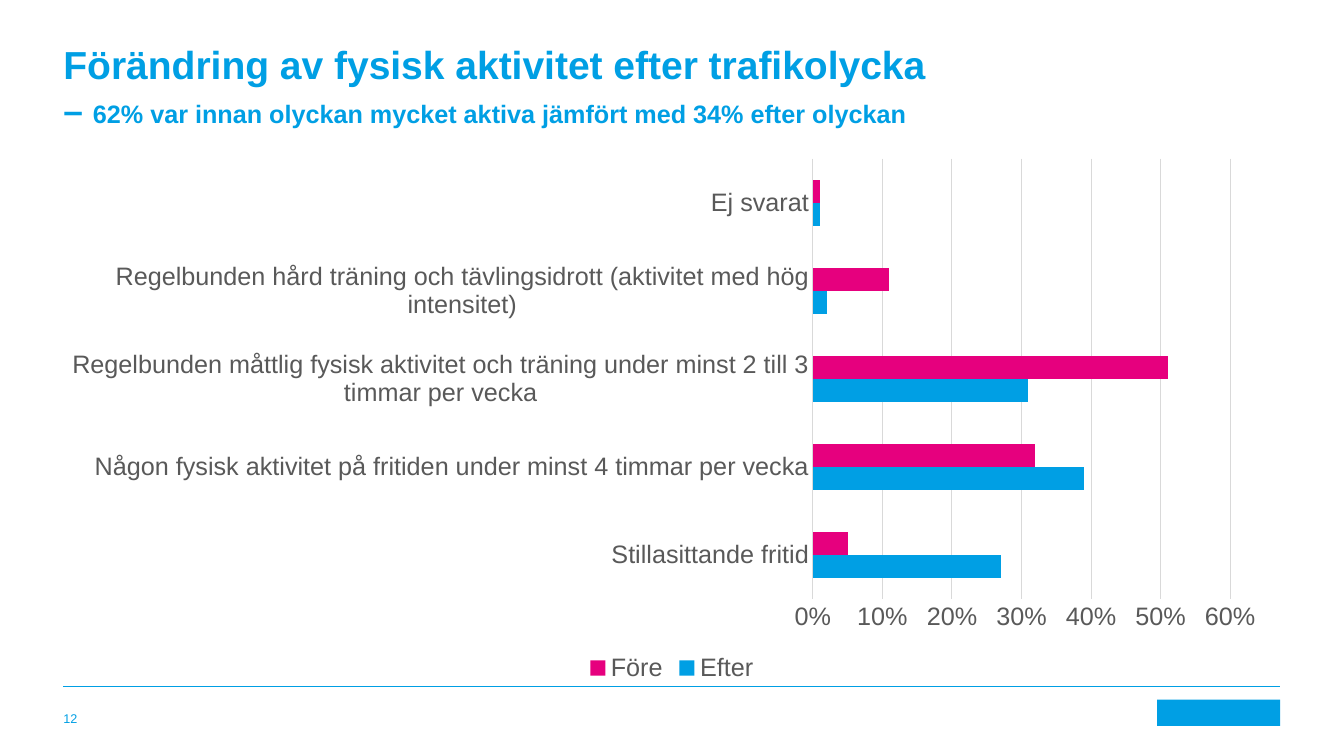
from lxml import etree
from pptx import Presentation
from pptx.chart.data import CategoryChartData
from pptx.dml.color import RGBColor
from pptx.enum.chart import XL_CHART_TYPE as ChartType
from pptx.enum.chart import XL_LEGEND_POSITION as LegendPosition
from pptx.enum.chart import XL_TICK_MARK as TickMark
from pptx.enum.shapes import MSO_CONNECTOR as Connector
from pptx.enum.shapes import MSO_SHAPE as Shape
from pptx.enum.text import MSO_ANCHOR as Anchor
from pptx.oxml.ns import qn
from pptx.util import Cm, Pt

BLUE, PINK, GREY, GRID = "009FE4", "E6007E", "595959", "D9D9D9"
FONT = "Arial"
MARGIN, CONTENT_WIDTH = 1.6, 30.66

ACTIVITY_LEVELS = [
    "Stillasittande fritid",
    "Någon fysisk aktivitet på fritiden under minst 4 timmar per vecka",
    "Regelbunden måttlig fysisk aktivitet och träning under minst 2 till 3 timmar per vecka",
    "Regelbunden hård träning och tävlingsidrott (aktivitet med hög intensitet)",
    "Ej svarat",
]
SHARES = [
    ("Efter", (0.27, 0.39, 0.31, 0.02, 0.01), BLUE),
    ("Före", (0.05, 0.32, 0.51, 0.11, 0.01), PINK),
]
# Share of the chart box taken by the bars
PLOT_LAYOUT = {"x": 0.616, "y": 0.02, "w": 0.343, "h": 0.816}


def color(hex_value):
    return RGBColor.from_string(hex_value)


def style_font(font, size, hex_value, bold=False):
    font.name = FONT
    font.size = Pt(size)
    font.bold = bold
    font.color.rgb = color(hex_value)


def add_text_frame(slide, left, top, width, height, anchor):
    frame = slide.shapes.add_textbox(Cm(left), Cm(top), Cm(width), Cm(height)).text_frame
    frame.word_wrap = True
    frame.vertical_anchor = anchor
    frame.margin_left = frame.margin_top = frame.margin_right = frame.margin_bottom = 0
    return frame


def add_run(paragraph, text, size, bold=False):
    run = paragraph.add_run()
    run.text = text
    style_font(run.font, size, BLUE, bold)


def add_heading(slide, left, top, width, height):
    heading = add_text_frame(slide, left, top, width, height, Anchor.TOP)
    title = heading.paragraphs[0]
    add_run(title, "Förändring av fysisk aktivitet efter trafikolycka", 27.9, True)
    subtitle = heading.add_paragraph()
    subtitle.space_before = Pt(1)
    add_run(subtitle, "– ", 25.2, True)
    add_run(subtitle, "62% var innan olyckan mycket aktiva jämfört med 34% efter olyckan", 18, True)


def fix_plot_area(chart):
    plot_area = chart._chartSpace.chart.plotArea
    layout = plot_area.find(qn("c:layout"))
    if layout is None:
        layout = etree.Element(qn("c:layout"))
        plot_area.insert(0, layout)
    manual = etree.SubElement(layout, qn("c:manualLayout"))
    settings = {"layoutTarget": "inner", "xMode": "edge", "yMode": "edge", **PLOT_LAYOUT}
    for tag, value in settings.items():
        etree.SubElement(manual, qn(f"c:{tag}")).set("val", str(value))


def add_activity_chart(slide, left, top, width, height):
    data = CategoryChartData(number_format="0%")
    data.categories = ACTIVITY_LEVELS
    for period, values, _ in SHARES:
        data.add_series(period, values)
    chart = slide.shapes.add_chart(
        ChartType.BAR_CLUSTERED, Cm(left), Cm(top), Cm(width), Cm(height), data
    ).chart
    chart.has_title = False
    style_font(chart.font, 18, GREY)
    fix_plot_area(chart)

    # Bars
    plot = chart.plots[0]
    plot.vary_by_categories = False
    plot.gap_width, plot.overlap = 182, 0
    for series, (_, _, fill) in zip(plot.series, SHARES):
        series.format.fill.solid()
        series.format.fill.fore_color.rgb = color(fill)

    # Axes
    levels, shares = chart.category_axis, chart.value_axis
    for axis in (levels, shares):
        axis.major_tick_mark = axis.minor_tick_mark = TickMark.NONE
        style_font(axis.tick_labels.font, 18, GREY)
    levels.has_major_gridlines = False
    shares.has_major_gridlines = True
    for line in (levels.format.line, shares.major_gridlines.format.line):
        line.color.rgb = color(GRID)
        line.width = Pt(0.75)
    shares.format.line.fill.background()
    shares.minimum_scale, shares.maximum_scale, shares.major_unit = 0, 0.6, 0.1
    shares.tick_labels.number_format = "0%"
    shares.tick_labels.number_format_is_linked = False

    # Legend
    chart.has_legend = True
    chart.legend.position = LegendPosition.BOTTOM
    chart.legend.include_in_layout = False
    style_font(chart.legend.font, 18, GREY)


def add_footer(slide, left, top, width):
    rule = slide.shapes.add_connector(
        Connector.STRAIGHT, Cm(left), Cm(top), Cm(left + width), Cm(top)
    )
    rule.line.color.rgb = color(BLUE)
    rule.line.width = Pt(0.5)
    etree.SubElement(rule._element.spPr, qn("a:effectLst"))

    # Page number on the left, plain brand block on the right
    row_top, row_height, brand_width = top + 0.33, 0.66, 3.1
    page = add_text_frame(slide, left, row_top, 1.47, row_height, Anchor.BOTTOM)
    add_run(page.paragraphs[0], "12", 9)
    brand = slide.shapes.add_shape(
        Shape.RECTANGLE, Cm(left + width - brand_width), Cm(row_top), Cm(brand_width), Cm(row_height)
    )
    brand.shadow.inherit = False
    brand.fill.solid()
    brand.fill.fore_color.rgb = color(BLUE)
    brand.line.fill.background()


def main():
    presentation = Presentation()
    presentation.slide_width, presentation.slide_height = Cm(33.87), Cm(19.05)
    slide = presentation.slides.add_slide(presentation.slide_layouts[6])
    add_footer(slide, MARGIN, 17.3, CONTENT_WIDTH)
    add_heading(slide, MARGIN, 1.02, CONTENT_WIDTH, 2.5)
    add_activity_chart(slide, MARGIN, 3.73, CONTENT_WIDTH, 13.59)
    presentation.save("out.pptx")


if __name__ == "__main__":
    main()
